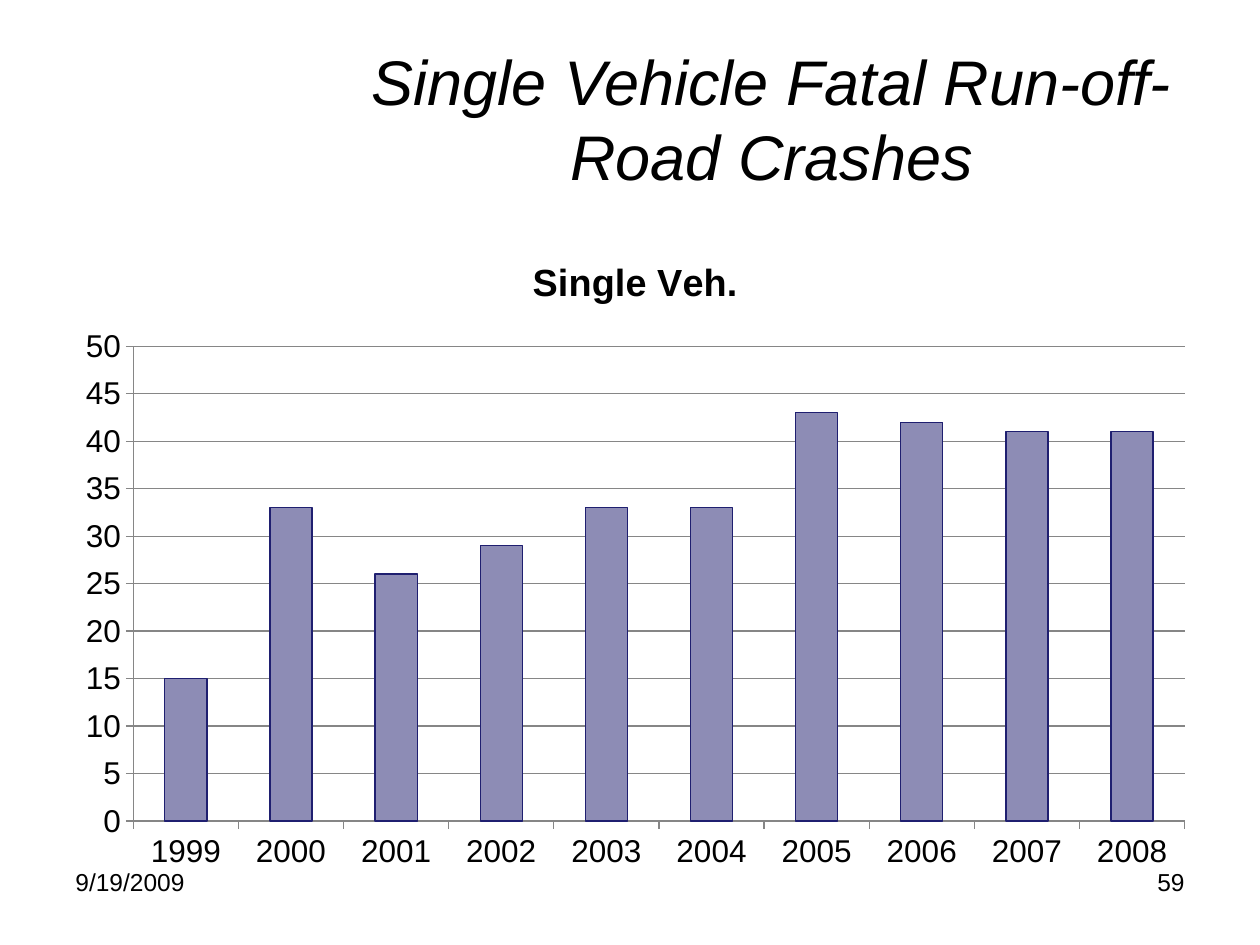
import pptx
import pptx.chart.data
import pptx.dml.color
import pptx.enum.chart
import pptx.enum.text
import pptx.util
from dataclasses import dataclass

Pt = pptx.util.Pt
Color = pptx.dml.color.RGBColor
Align = pptx.enum.text.PP_ALIGN
Anchor = pptx.enum.text.MSO_ANCHOR


@dataclass(frozen=True)
class Theme:
    font: str = "Arial"
    text: str = "000000"
    bar: str = "8D8CB5"
    bar_edge: str = "1F1F70"
    axis: str = "868686"
    title_size: float = 36
    chart_title_size: float = 21.6
    chart_size: float = 18
    footer_size: float = 14


THEME = Theme()


def style_font(font, size, bold=False, italic=False):
    font.name = THEME.font
    font.size = Pt(size)
    font.bold = bold
    font.italic = italic
    font.color.rgb = Color.from_string(THEME.text)


def style_line(line, color):
    line.color.rgb = Color.from_string(color)
    line.width = Pt(0.75)


def add_text(page, area, text, size, align, anchor=Anchor.TOP, italic=False):
    box = page.shapes.add_textbox(*map(Pt, area))
    frame = box.text_frame
    frame.word_wrap = True
    frame.vertical_anchor = anchor
    para = frame.paragraphs[0]
    para.alignment = align
    span = para.add_run()
    span.text = text
    style_font(span.font, size, italic=italic)


def style_axis(axis):
    axis.major_tick_mark = pptx.enum.chart.XL_TICK_MARK.OUTSIDE
    axis.minor_tick_mark = pptx.enum.chart.XL_TICK_MARK.NONE
    style_line(axis.format.line, THEME.axis)
    style_font(axis.tick_labels.font, THEME.chart_size)


def add_column_chart(page, area, name, years, crashes):
    data = pptx.chart.data.CategoryChartData()
    data.categories = years
    data.add_series(name, crashes)
    kind = pptx.enum.chart.XL_CHART_TYPE.COLUMN_CLUSTERED
    chart = page.shapes.add_chart(kind, *map(Pt, area), data).chart
    style_font(chart.font, THEME.chart_size)
    chart.has_legend = False

    # Heading
    chart.has_title = True
    chart.chart_title.include_in_layout = False
    span = chart.chart_title.text_frame.paragraphs[0].add_run()
    span.text = name
    style_font(span.font, THEME.chart_title_size, bold=True)

    # Axes and gridlines
    style_axis(chart.category_axis)
    values = chart.value_axis
    style_axis(values)
    values.minimum_scale, values.maximum_scale, values.major_unit = 0, 50, 5
    values.has_major_gridlines = True
    style_line(values.major_gridlines.format.line, THEME.axis)

    # Columns
    plot = chart.plots[0]
    plot.vary_by_categories = False
    plot.gap_width = 150
    columns = plot.series[0].format
    columns.fill.solid()
    columns.fill.fore_color.rgb = Color.from_string(THEME.bar)
    style_line(columns.line, THEME.bar_edge)


def main():
    deck = pptx.Presentation()
    deck.slide_width, deck.slide_height = Pt(720), Pt(540)
    page = deck.slides.add_slide(deck.slide_layouts[6])

    # Title
    add_text(page, (180, 18, 522, 98.64), "Single Vehicle Fatal Run-off-Road Crashes",
             THEME.title_size, Align.CENTER, Anchor.MIDDLE, italic=True)

    # Date and page number
    for left, text, align in ((36, "9/19/2009", Align.LEFT), (516, "59", Align.RIGHT)):
        add_text(page, (left, 492, 168, 37.5), text, THEME.footer_size, align)

    # Crashes by year
    years = [str(year) for year in range(1999, 2009)]
    add_column_chart(page, (36, 132, 654, 372), "Single Veh.", years,
                     [15, 33, 26, 29, 33, 33, 43, 42, 41, 41])

    deck.save("out.pptx")


if __name__ == "__main__":
    main()
